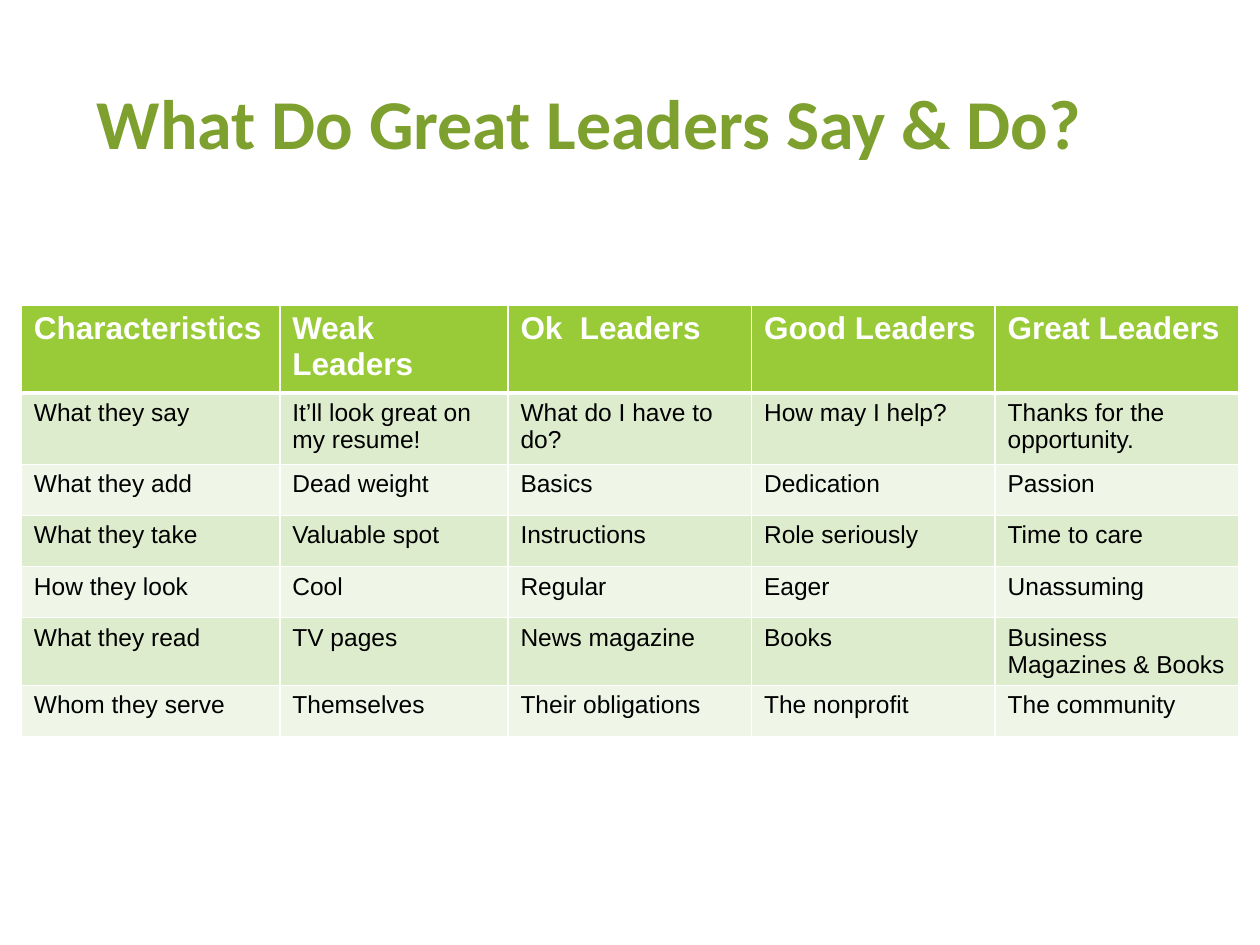
from lxml import etree
from pptx import Presentation
from pptx.dml.color import RGBColor
from pptx.enum.text import MSO_ANCHOR, MSO_AUTO_SIZE, PP_ALIGN
from pptx.oxml.ns import qn
from pptx.util import Cm, Pt

TOP = MSO_ANCHOR.TOP
FIXED = MSO_AUTO_SIZE.NONE
LEFT = PP_ALIGN.LEFT

TITLE = "What Do Great Leaders Say & Do?"
ROWS = [
    ("Characteristics", "Weak Leaders", "Ok  Leaders", "Good Leaders", "Great Leaders"),
    ("What they say", "It’ll look great on my resume!", "What do I have to do?",
     "How may I help?", "Thanks for the opportunity."),
    ("What they add", "Dead weight", "Basics", "Dedication", "Passion"),
    ("What they take", "Valuable spot", "Instructions", "Role seriously", "Time to care"),
    ("How they look", "Cool", "Regular", "Eager", "Unassuming"),
    ("What they read", "TV pages", "News magazine", "Books", "Business Magazines & Books"),
    ("Whom they serve", "Themselves", "Their obligations", "The nonprofit", "The community"),
]
WIDTHS = [5.21, 4.6, 4.91, 4.91, 4.91]
HEIGHTS = [1.77, 1.44] + [1.03] * 5
COLORS = {
    "title": "7EA02E",
    "head": "99CB38",
    "odd": "DEECCE",
    "even": "EFF6E8",
    "white": "FFFFFF",
    "black": "000000",
}


def color(name):
    return RGBColor.from_string(COLORS[name])


def write(frame, text, font, size, tint, bold):
    para = frame.paragraphs[0]
    para.alignment = LEFT
    run = para.add_run()
    run.text = text
    run.font.name = font
    run.font.size = Pt(size)
    run.font.bold = bold
    run.font.color.rgb = color(tint)


def edge(cell, side, width):
    props = cell._tc.get_or_add_tcPr()
    line = etree.SubElement(props, qn("a:" + side), w=str(Pt(width)))
    fill = etree.SubElement(line, qn("a:solidFill"))
    etree.SubElement(fill, qn("a:srgbClr"), val=COLORS["white"])


def add_title(slide):
    title = slide.shapes.title
    title.left, title.top = Cm(1.7), Cm(1.47)
    title.width, title.height = Cm(21.59), Cm(2.54)
    frame = title.text_frame
    frame.word_wrap = True
    frame.auto_size = FIXED
    frame.vertical_anchor = TOP
    write(frame, TITLE, "Calibri", 40, "title", True)


def add_grid(slide):
    grid = slide.shapes.add_table(
        len(ROWS), len(WIDTHS), Cm(0.43), Cm(6.15),
        Cm(sum(WIDTHS)), Cm(sum(HEIGHTS))).table
    for col, width in zip(grid.columns, WIDTHS):
        col.width = Cm(width)
    for row, height in zip(grid.rows, HEIGHTS):
        row.height = Cm(height)
    for r, texts in enumerate(ROWS):
        head = r == 0
        shade = "head" if head else "odd" if r % 2 else "even"
        sides = {"lnL": 1, "lnR": 1, "lnT": 3 if r == 1 else 1, "lnB": 3 if head else 1}
        for c, text in enumerate(texts):
            cell = grid.cell(r, c)
            for side, width in sides.items():
                edge(cell, side, width)
            cell.fill.solid()
            cell.fill.fore_color.rgb = color(shade)
            write(cell.text_frame, text, "Arial", 18 if head else 14,
                  "white" if head else "black", head)


def main():
    deck = Presentation()
    deck.slide_width, deck.slide_height = Cm(25.4), Cm(19.05)
    slide = deck.slides.add_slide(deck.slide_layouts[5])
    add_title(slide)
    add_grid(slide)
    deck.save("out.pptx")


if __name__ == "__main__":
    main()
